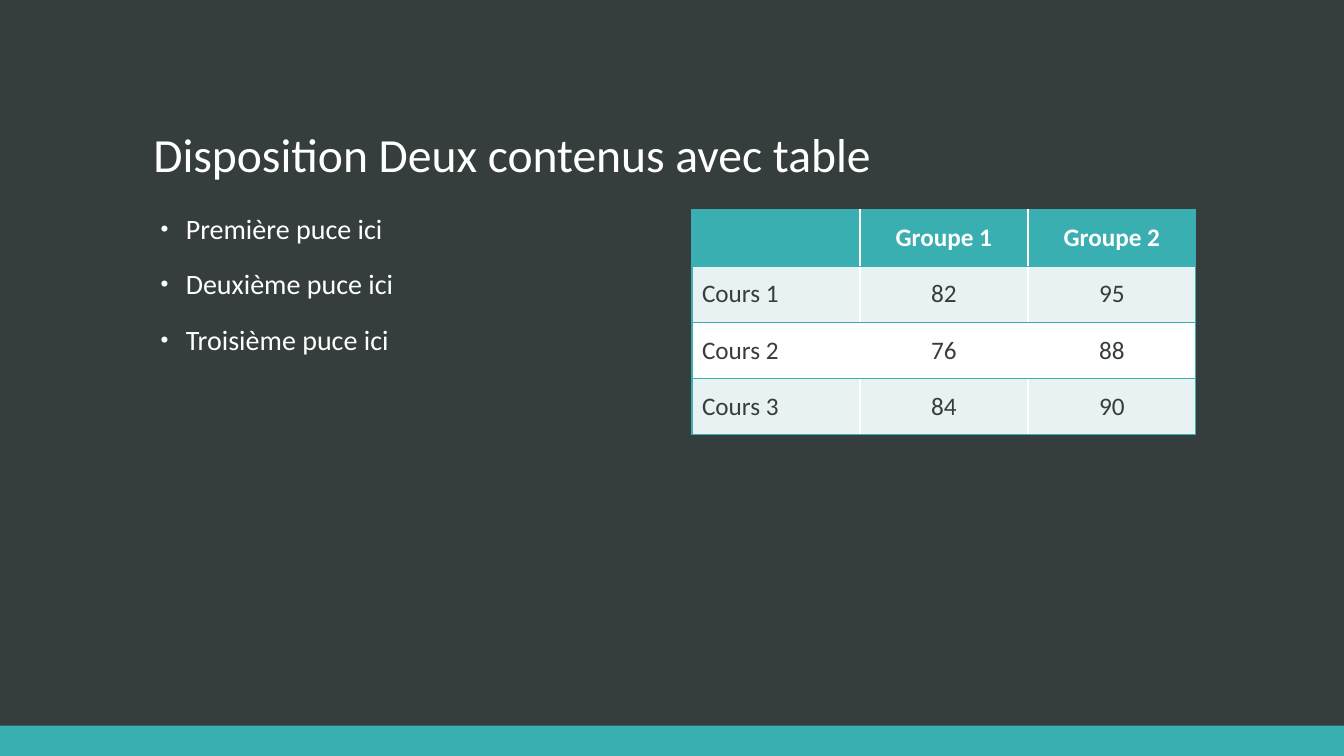
from lxml.etree import SubElement
from pptx import Presentation
from pptx.dml.color import RGBColor
from pptx.enum.shapes import MSO_SHAPE
from pptx.enum.text import MSO_ANCHOR, PP_ALIGN
from pptx.oxml import parse_xml
from pptx.oxml.ns import nsdecls, qn
from pptx.util import Pt

PX = 9525
WIDTH, HEIGHT = 1280, 720
DARK, TEAL, PALE, WHITE = "363D3D", "3AAFB2", "E8F2F2", "FFFFFF"
FONT = "Calibri"

TITLE = "Disposition Deux contenus avec table"
BULLETS = ["Première puce ici", "Deuxième puce ici", "Troisième puce ici"]
SCORES = [
    ["", "Groupe 1", "Groupe 2"],
    ["Cours 1", "82", "95"],
    ["Cours 2", "76", "88"],
    ["Cours 3", "84", "90"],
]


def to_emu(box):
    return [length * PX for length in box]


def paint(fill, color):
    fill.solid()
    fill.fore_color.rgb = RGBColor.from_string(color)


def add_run(paragraph, text, size, color, bold=False):
    run = paragraph.add_run()
    run.text = text
    run.font.name = FONT
    run.font.size = Pt(size)
    run.font.bold = bold
    run.font.color.rgb = RGBColor.from_string(color)


def add_text_frame(slide, box, inset, anchor):
    frame = slide.shapes.add_textbox(*to_emu(box)).text_frame
    frame.word_wrap = True
    frame.vertical_anchor = anchor
    frame.margin_left = frame.margin_right = inset * PX
    frame.margin_top = frame.margin_bottom = 5 * PX
    return frame


def add_footer_band(slide, box):
    band = slide.shapes.add_shape(MSO_SHAPE.RECTANGLE, *to_emu(box))
    band.shadow.inherit = False
    paint(band.fill, TEAL)
    band.line.fill.background()


def add_title(slide, box):
    paragraph = add_text_frame(slide, box, 5, MSO_ANCHOR.BOTTOM).paragraphs[0]
    paragraph.line_spacing = 0.9
    add_run(paragraph, TITLE, 34, WHITE)


def set_bullet(paragraph, indent, hanging):
    properties = paragraph._p.get_or_add_pPr()
    properties.set("marL", str(indent * PX))
    properties.set("indent", str(-hanging * PX))
    SubElement(properties, qn("a:buSzPct"), val="80000")
    SubElement(properties, qn("a:buFont"), typeface="Arial")
    SubElement(properties, qn("a:buChar"), char="•")


def add_bullets(slide, box):
    frame = add_text_frame(slide, box, 7, MSO_ANCHOR.TOP)
    for index, text in enumerate(BULLETS):
        paragraph = frame.add_paragraph() if index else frame.paragraphs[0]
        paragraph.line_spacing = 0.9
        paragraph.space_before = Pt(18)
        set_bullet(paragraph, 29, 24)
        add_run(paragraph, text, 20, WHITE)


def set_borders(cell, sides):
    """Draw teal lines on the given sides, in the order L, R, T, B."""
    properties = cell._tc.get_or_add_tcPr()
    for position, side in enumerate(sides):
        line = parse_xml(
            f'<a:ln{side} {nsdecls("a")} w="{Pt(1)}"><a:solidFill>'
            f'<a:srgbClr val="{TEAL}"/></a:solidFill></a:ln{side}>'
        )
        properties.insert(position, line)


def add_score_table(slide, box):
    rows, columns = len(SCORES), len(SCORES[0])
    table = slide.shapes.add_table(rows, columns, *to_emu(box)).table
    for row, values in enumerate(SCORES):
        header = row == 0
        for column, text in enumerate(values):
            cell = table.cell(row, column)
            cell.vertical_anchor = MSO_ANCHOR.MIDDLE
            paint(cell.fill, TEAL if header else PALE if row % 2 else WHITE)
            outer = {0: "L", columns - 1: "R"}.get(column, "")
            set_borders(cell, outer + "TB")
            if text:
                paragraph = cell.text_frame.paragraphs[0]
                paragraph.alignment = PP_ALIGN.CENTER if column else PP_ALIGN.LEFT
                add_run(paragraph, text, 18, WHITE if header else DARK, header)


def main():
    presentation = Presentation()
    presentation.slide_width, presentation.slide_height = to_emu((WIDTH, HEIGHT))
    slide = presentation.slides.add_slide(presentation.slide_layouts[6])
    paint(slide.background.fill, DARK)
    add_footer_band(slide, (0, 691, WIDTH, 29))
    add_title(slide, (141, 49, 998, 130))
    add_bullets(slide, (141, 200, 480, 433))
    add_score_table(slide, (659, 200, 480, 214))
    presentation.save("out.pptx")


if __name__ == "__main__":
    main()
